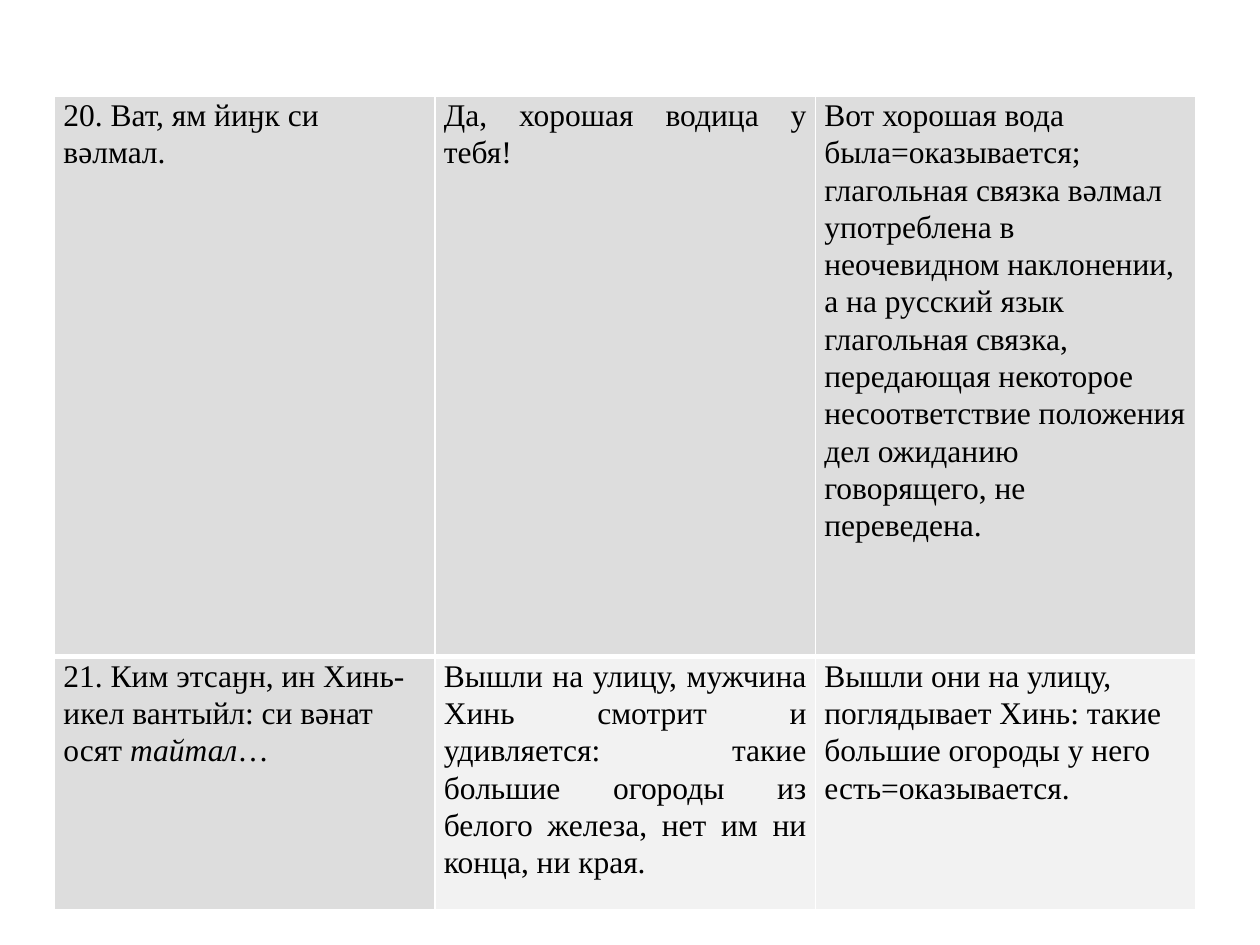
from pptx import Presentation
from pptx.util import Pt
from pptx.dml.color import RGBColor
from pptx.enum.text import PP_ALIGN as Align
from pptx.oxml import parse_xml
from pptx.oxml.ns import nsdecls

BLACK = RGBColor(0, 0, 0)
GREY = RGBColor(0xDD, 0xDD, 0xDD)
PALE = RGBColor(0xF2, 0xF2, 0xF2)

ROWS = [
    [
        ["20. Ват, ям йиӈк си вǝлмал."],
        ["Да, хорошая водица у тебя!"],
        ["Вот хорошая вода была=оказывается; глагольная связка вǝлмал "
         "употреблена в неочевидном наклонении, а на русский язык "
         "глагольная связка, передающая некоторое несоответствие "
         "положения дел ожиданию говорящего, не переведена."],
    ],
    [
        ["21. Ким этсаӈн, ин Хинь-икел вантыйл: си вǝнат осят ",
         "тайтал", "…"],
        ["Вышли на улицу, мужчина Хинь смотрит и удивляется: такие большие "
         "огороды из белого железа, нет им ни конца, ни края. "],
        ["Вышли они на улицу, поглядывает Хинь: такие большие огороды "
         "у него есть=оказывается."],
    ],
]
HIGHS = [Pt(320.4), Pt(144.8)]
WIDE = Pt(217.4)


def edge(cell, side, size):
    return parse_xml(
        f'<a:ln{side} {nsdecls("a")} w="{Pt(size)}"><a:solidFill>'
        f'<a:srgbClr val="FFFFFF"/></a:solidFill></a:ln{side}>')


deck = Presentation()
deck.slide_width, deck.slide_height = Pt(720), Pt(540)
slide = deck.slides.add_slide(deck.slide_layouts[6])
frame = slide.shapes.add_table(
    2, 3, Pt(31.2), Pt(54.8), WIDE * 3, sum(HIGHS))
table = frame.table
for col in table.columns:
    col.width = WIDE

for r, row in enumerate(ROWS):
    table.rows[r].height = HIGHS[r]
    for c, parts in enumerate(row):
        cell = table.cell(r, c)
        cell.margin_left = cell.margin_right = Pt(5.1)
        cell.margin_top = cell.margin_bottom = 0
        cell.fill.solid()
        cell.fill.fore_color.rgb = PALE if r and c else GREY
        sizes = {"L": 1, "R": 1, "T": 3 if r else 1, "B": 1 if r else 3}
        props = cell._tc.get_or_add_tcPr()
        for i, (side, size) in enumerate(sizes.items()):
            props.insert(i, edge(cell, side, size))

        para = cell.text_frame.paragraphs[0]
        para.alignment = Align.JUSTIFY if c == 1 else Align.LEFT
        para.line_spacing = 1.07
        para.space_after = Pt(8)
        for i, part in enumerate(parts):
            run = para.add_run()
            run.text = part
            font = run.font
            font.name, font.size = "Times New Roman", Pt(18)
            font.bold, font.italic = False, i == 1
            font.color.rgb = BLACK

deck.save("out.pptx")
